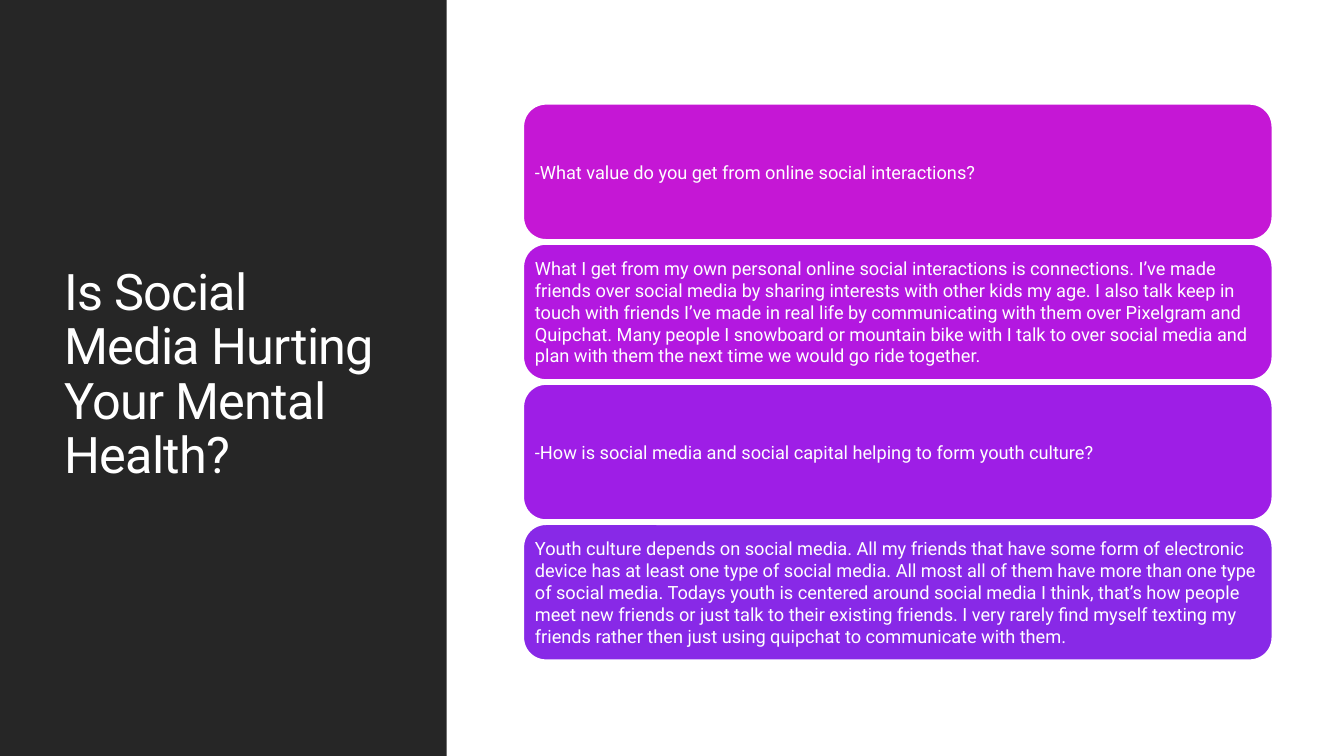
from pptx import Presentation
from pptx import util as u
from pptx.dml.color import RGBColor
from pptx.enum import shapes, text

PX = 9144  # EMU per px, 100 px to the inch
COLORS = {"panel": "262626", "white": "FFFFFF", "magenta": "C517D5",
          "orchid": "B318E0", "purple": "9E1EE6", "violet": "8829E7"}
CARDS = [
    ("magenta", "-What value do you get from online social interactions?"),
    ("orchid", "What I get from my own personal online social interactions is "
               "connections. I’ve made friends over social media by sharing "
               "interests with other kids my age. I also talk keep in touch with "
               "friends I’ve made in real life by communicating with them over "
               "Pixelgram and Quipchat. Many people I snowboard or mountain bike "
               "with I talk to over social media and plan with them the next time "
               "we would go ride together."),
    ("purple", "-How is social media and social capital helping to form youth "
               "culture?"),
    ("violet", "Youth culture depends on social media. All my friends that have "
               "some form of electronic device has at least one type of social "
               "media. All most all of them have more than one type of social "
               "media. Todays youth is centered around social media I think, "
               "that’s how people meet new friends or just talk to their existing "
               "friends. I very rarely find myself texting my friends rather then "
               "just using quipchat to communicate with them."),
]
CARD_TOP, CARD_H, CARD_STEP = 103, 135, 139


def rgb(name):
    return RGBColor.from_string(COLORS[name])


def px(*lengths):
    return [u.Emu(n * PX) for n in lengths]


def set_format(obj, formats):
    for name, value in formats.items():
        setattr(obj, name, value)


def add_box(s, kind, box, fill, line=None):
    sp = s.shapes.add_shape(kind, *px(*box))
    sp.shadow.inherit = False
    sp.fill.solid()
    sp.fill.fore_color.rgb = rgb(fill)
    if line:
        sp.line.color.rgb = rgb(line)
        sp.line.width = u.Pt(1.25)
    else:
        sp.line.fill.background()
    return sp


def write(sp, words, size, inset, line_spacing=1.0):
    tf = sp.text_frame
    left, top = px(*inset)
    set_format(tf, {"word_wrap": True, "vertical_anchor": text.MSO_ANCHOR.MIDDLE,
                    "margin_left": left, "margin_right": left,
                    "margin_top": top, "margin_bottom": top})
    p = tf.paragraphs[0]
    set_format(p, {"alignment": text.PP_ALIGN.LEFT, "line_spacing": line_spacing})
    r = p.add_run()
    r.text = words
    set_format(r.font, {"name": "Roboto", "size": u.Pt(size)})
    r.font.color.rgb = rgb("white")
    return r


def add_title(s, words):
    sp = s.shapes.add_textbox(*px(54, 57, 337, 631))
    r = write(sp, words, 36, (10, 5), 0.9)
    r.font._element.set("spc", "-50")  # tighter letters


def add_card(s, row, fill, words):
    box = (519, CARD_TOP + row * CARD_STEP, 743, CARD_H)
    sp = add_box(s, shapes.MSO_SHAPE.ROUNDED_RECTANGLE, box, fill, "white")
    write(sp, words, 13, (5, 5))


def main():
    prs = Presentation()
    prs.slide_width, prs.slide_height = px(1333, 750)
    s = prs.slides.add_slide(prs.slide_layouts[6])

    # Dark title panel
    add_box(s, shapes.MSO_SHAPE.RECTANGLE, (0, 0, 443, 750), "panel")
    add_title(s, "Is Social Media Hurting Your Mental Health?")

    # Question and answer cards
    for row, (fill, words) in enumerate(CARDS):
        add_card(s, row, fill, words)

    prs.save("out.pptx")


if __name__ == "__main__":
    main()
